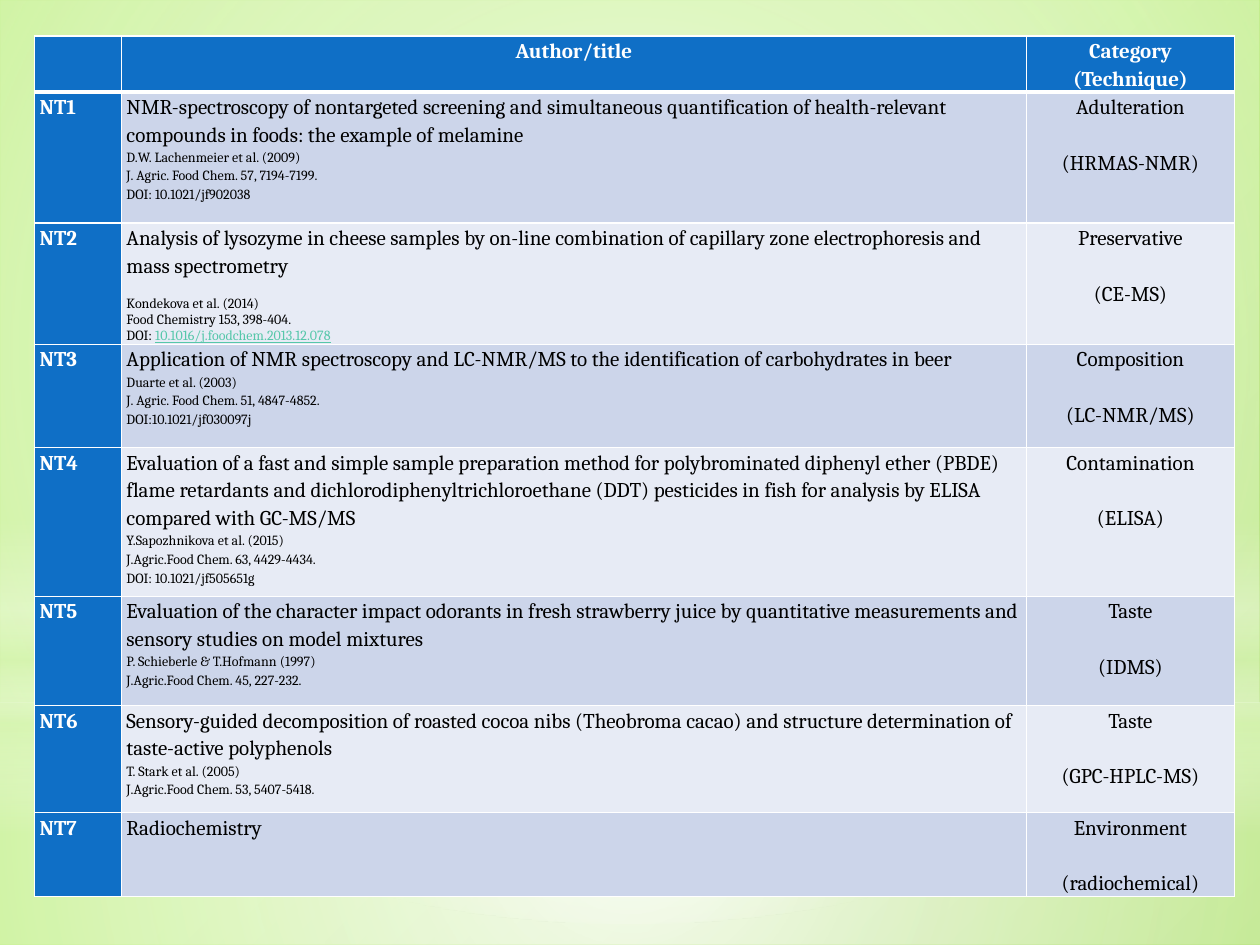
from lxml.etree import SubElement as Sub
from pptx import Presentation
from pptx.dml.color import RGBColor as RGB
from pptx.enum.shapes import MSO_SHAPE as SHAPE
from pptx.enum.text import PP_ALIGN as ALIGN
from pptx.oxml.ns import qn
from pptx.util import Cm, Pt

WHITE = RGB(0xFF, 0xFF, 0xFF)
BLACK = RGB(0, 0, 0)
BLUE = RGB(0x0F, 0x6F, 0xC6)
TEAL = RGB(0x56, 0xC7, 0xAA)
LIME = RGB(0xAA, 0xEA, 0x5A)
GREEN = RGB(0x75, 0xBF, 0x19)
PALE = RGB(0xDB, 0xF6, 0xB9)
BANDS = RGB(0xCC, 0xD5, 0xEA), RGB(0xE7, 0xEB, 0xF5)

HEAD = ["", "Author/title", "Category (Technique)"]
PAPERS = [
    ("NMR-spectroscopy of nontargeted screening and simultaneous quantification of "
     "health-relevant compounds in foods: the example of melamine",
     ["D.W. Lachenmeier et al. (2009)", "J. Agric. Food Chem. 57, 7194-7199.",
      "DOI: 10.1021/jf902038"],
     "Adulteration", "(HRMAS-NMR)"),
    ("Analysis of lysozyme in cheese samples by on-line combination of capillary zone "
     "electrophoresis and mass spectrometry",
     ["Kondekova et al. (2014)", "Food Chemistry 153, 398-404.",
      ("DOI: ", "10.1016/j.foodchem.2013.12.078")],
     "Preservative", "(CE-MS)"),
    ("Application of NMR spectroscopy and LC-NMR/MS to the identification of "
     "carbohydrates in beer",
     ["Duarte et al. (2003)", "J. Agric. Food Chem. 51, 4847-4852.",
      "DOI:10.1021/jf030097j"],
     "Composition", "(LC-NMR/MS)"),
    ("Evaluation of a fast and simple sample preparation method for polybrominated "
     "diphenyl ether (PBDE) flame retardants and dichlorodiphenyltrichloroethane (DDT) "
     "pesticides in fish for analysis by ELISA compared with GC-MS/MS",
     ["Y.Sapozhnikova et al. (2015)", "J.Agric.Food Chem. 63, 4429-4434.",
      "DOI: 10.1021/jf505651g"],
     "Contamination", "(ELISA)"),
    ("Evaluation of the character impact odorants in fresh strawberry juice by "
     "quantitative measurements and sensory studies on model mixtures",
     ["P. Schieberle & T.Hofmann (1997)", "J.Agric.Food Chem. 45, 227-232."],
     "Taste", "(IDMS)"),
    ("Sensory-guided decomposition of roasted cocoa nibs (Theobroma cacao) and "
     "structure determination of taste-active polyphenols",
     ["T. Stark et al. (2005)", "J.Agric.Food Chem. 53, 5407-5418."],
     "Taste", "(GPC-HPLC-MS)"),
    ("Radiochemistry", [], "Environment", "(radiochemical)"),
]
COLS = [1.75, 18.24, 4.2]
ROWS = [1.11, 2.64, 2.44, 2.08, 3, 2.2, 2.16, 1.67]

CENTRE = (50, 50, 50, 50)
GLOWS = [
    (SHAPE.RECTANGLE, 14.17, 4.88, CENTRE,
     [(0, WHITE, 91), (37, WHITE, 76), (100, PALE, 79)]),
    (SHAPE.RECTANGLE, 0, 14.17, CENTRE,
     [(0, WHITE, 89), (48, WHITE, 62), (100, PALE, 79)]),
    (SHAPE.RECTANGLE, 10.46, 6.35, None,
     [(0, WHITE, 0), (29, WHITE, 30), (45, PALE, 40),
      (55, WHITE, 26), (65, PALE, 60), (100, WHITE, 0)]),
    (SHAPE.OVAL, 4.45, 14.17, CENTRE, [(0, WHITE, 100), (56, WHITE, 0)]),
]


def shade(item, stops, focus):
    grad = item.find(".//" + qn("a:gradFill"))
    for kid in list(grad):
        grad.remove(kid)
    held = Sub(grad, qn("a:gsLst"))
    for pos, tint, alpha in stops:
        stop = Sub(held, qn("a:gs"), pos=str(pos * 1000))
        clr = Sub(stop, qn("a:srgbClr"), val=str(tint))
        Sub(clr, qn("a:alpha"), val=str(alpha * 1000))
    if focus:
        way = Sub(grad, qn("a:path"), {"path": "circle"})
        Sub(way, qn("a:fillToRect"),
            {side: str(part * 1000) for side, part in zip("ltrb", focus)})
    else:
        Sub(grad, qn("a:lin"), ang="5400000", scaled="0")


def write(cell, text, size=12, color=BLACK, bold=False, align=ALIGN.LEFT,
          space=1.15, after=0):
    frame = cell.text_frame
    para = frame.paragraphs[0]
    if para.runs:
        para = frame.add_paragraph()
    para.alignment, para.line_spacing, para.space_after = align, space, Pt(after)
    parts = (text,) if isinstance(text, str) else text
    for n, part in enumerate(parts):
        run = para.add_run()
        run.text = part
        font = run.font
        font.name, font.size, font.bold = "Cambria", Pt(size), bold
        font.color.rgb = TEAL if n else color
        font.underline = n > 0


def dress(cell, tint, heavy=None):
    cell.margin_left = cell.margin_right = Cm(0.1)
    cell.margin_top = cell.margin_bottom = 0
    props = cell._tc.get_or_add_tcPr()
    for side in "LRTB":
        line = Sub(props, qn("a:ln" + side), w=str(Pt(3 if side == heavy else 1)))
        Sub(Sub(line, qn("a:solidFill")), qn("a:srgbClr"), val=str(WHITE))
    cell.fill.solid()
    cell.fill.fore_color.rgb = tint


def main():
    deck = Presentation()
    deck.slide_width, deck.slide_height = Cm(25.4), Cm(19.05)
    slide = deck.slides.add_slide(deck.slide_layouts[6])
    slide.background.fill.gradient()
    shade(slide.element, [(0, LIME, 100), (48, LIME, 100), (100, GREEN, 100)],
          (0, 0, 100, 100))
    for kind, top, high, focus, stops in GLOWS:
        glow = slide.shapes.add_shape(kind, 0, Cm(top), deck.slide_width, Cm(high))
        glow.shadow.inherit = False
        glow.line.fill.background()
        glow.fill.gradient()
        shade(glow.element, stops, focus)

    table = slide.shapes.add_table(len(ROWS), len(COLS), Cm(0.7), Cm(0.73),
                                   Cm(sum(COLS)), Cm(sum(ROWS))).table
    for col, wide in zip(table.columns, COLS):
        col.width = Cm(wide)
    for row, high in zip(table.rows, ROWS):
        row.height = Cm(high)

    for n, label in enumerate(HEAD):
        cell = table.cell(0, n)
        dress(cell, BLUE, heavy="B")
        if label:
            write(cell, label, color=WHITE, bold=True, align=ALIGN.CENTER)

    for n, (title, refs, topic, method) in enumerate(PAPERS, 1):
        tag, work, group = (table.cell(n, c) for c in range(3))
        band = BANDS[(n - 1) % 2]
        for cell, tint in ((tag, BLUE), (work, band), (group, band)):
            dress(cell, tint, heavy="T" if n == 1 else None)
        linked = any(isinstance(ref, tuple) for ref in refs)
        write(tag, f"NT{n}", color=WHITE, bold=True)
        write(work, title, after=10 if linked else 0)
        for ref in refs:
            write(work, ref, size=8, space=1 if linked else 1.15)
        write(group, topic, align=ALIGN.CENTER, after=16)
        write(group, method, align=ALIGN.CENTER)
    deck.save("out.pptx")


if __name__ == "__main__":
    main()
